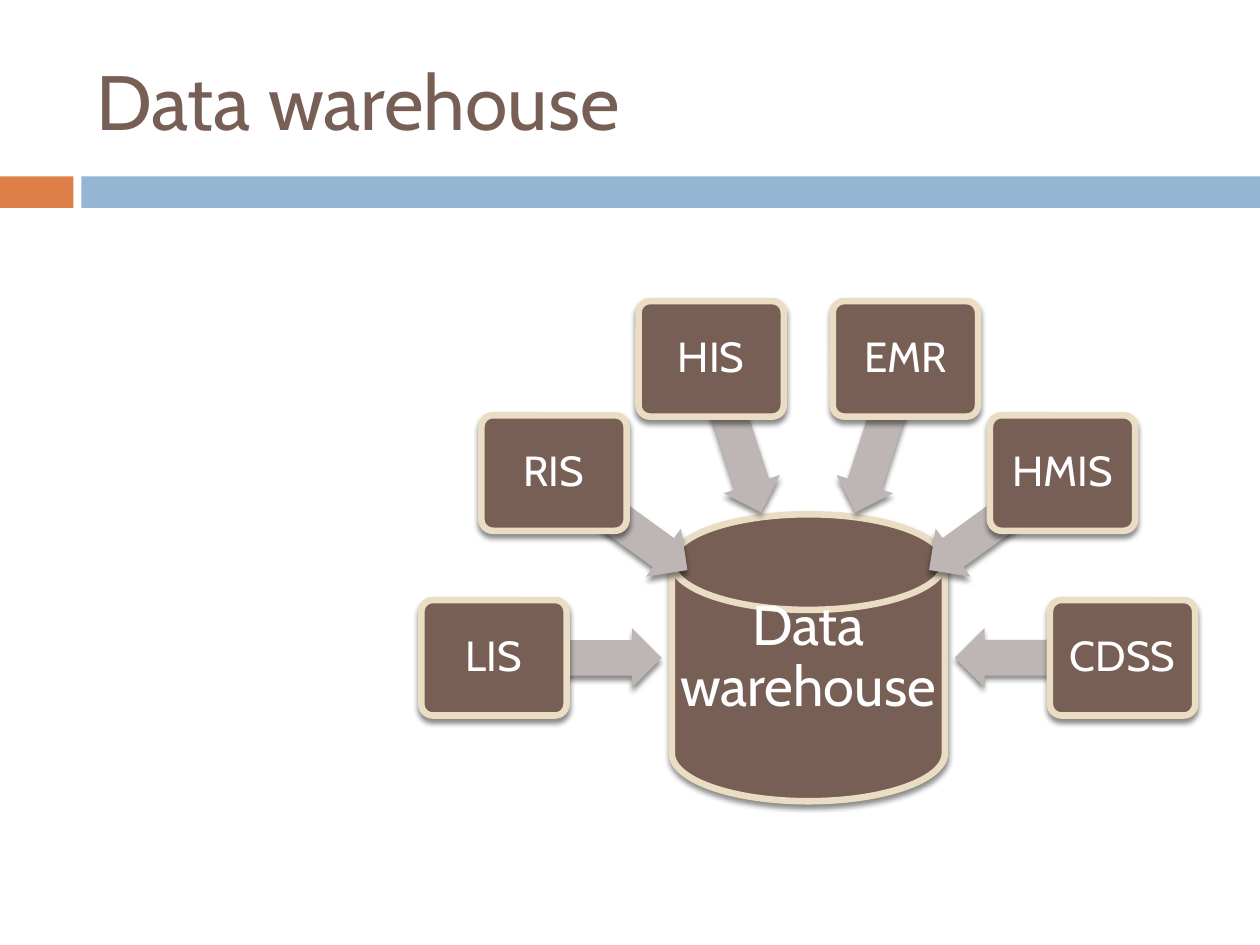
from math import cos, radians, sin

from lxml import etree
from pptx import Presentation
from pptx.dml.color import RGBColor
from pptx.enum.shapes import MSO_SHAPE
from pptx.enum.text import MSO_ANCHOR, PP_ALIGN
from pptx.oxml.ns import qn
from pptx.util import Pt

RECTANGLE = MSO_SHAPE.RECTANGLE
ROUNDED = MSO_SHAPE.ROUNDED_RECTANGLE
ARROW = MSO_SHAPE.LEFT_ARROW
DISK = MSO_SHAPE.FLOWCHART_MAGNETIC_DISK
LEFT, CENTER = PP_ALIGN.LEFT, PP_ALIGN.CENTER
MIDDLE = MSO_ANCHOR.MIDDLE

BROWN, CREAM, GREY = "775F55", "EBDDC3", "BDB6B4"
ORANGE, BLUE, WHITE = "DD8047", "94B6D2", "FFFFFF"

HUB_X, HUB_Y = 461.9, 375.9
RING_RADIUS = 179.6
BOX_WIDTH, BOX_HEIGHT = 83, 66
ARROW_HEIGHT = 34
# Name, direction from the hub in degrees, arrow length
SYSTEMS = [
    ("LIS", 180, 95.8),
    ("RIS", 216, 94.3),
    ("HIS", 252, 92.2),
    ("EMR", 288, 92.2),
    ("HMIS", 324, 94.3),
    ("CDSS", 360, 95.8),
]


def color(value):
    return RGBColor.from_string(value)


class SlideBuilder:
    font = "Cabin"

    def __init__(self, slide):
        self.slide = slide

    def shape(self, kind, left, top, width, height, fill, line=None):
        shape = self.slide.shapes.add_shape(
            kind, Pt(left), Pt(top), Pt(width), Pt(height))
        shape.shadow.inherit = False
        shape.fill.solid()
        shape.fill.fore_color.rgb = color(fill)
        if line:
            shape.line.color.rgb = color(line)
            shape.line.width = Pt(3.75)
        else:
            shape.line.fill.background()
        return shape

    def shadow(self, shape):
        """Cast a soft shadow straight down."""
        effects = shape._element.spPr.find(qn("a:effectLst"))
        shadow = etree.SubElement(
            effects, qn("a:outerShdw"), blurRad=str(Pt(3)), dist=str(Pt(2.4)),
            dir="5400000", rotWithShape="0")
        black = etree.SubElement(shadow, qn("a:srgbClr"), val="000000")
        etree.SubElement(black, qn("a:alpha"), val="45000")

    def label(self, shape, text, size, fill, align=CENTER, inset=3.6, spacing=0.9):
        frame = shape.text_frame
        frame.word_wrap = True
        frame.vertical_anchor = MIDDLE
        frame.margin_left = frame.margin_right = Pt(inset)
        frame.margin_top = frame.margin_bottom = Pt(min(inset, 3.6))
        paragraph = frame.paragraphs[0]
        paragraph.text = text
        paragraph.alignment = align
        paragraph.line_spacing = spacing
        paragraph.font.name = self.font
        paragraph.font.size = Pt(size)
        paragraph.font.color.rgb = color(fill)

    def text(self, left, top, width, height, text, size, fill, **style):
        box = self.slide.shapes.add_textbox(
            Pt(left), Pt(top), Pt(width), Pt(height))
        self.label(box, text, size, fill, **style)

    def hub(self, text, width, height):
        place = (HUB_X - width / 2, HUB_Y - height / 2, width, height)
        self.shadow(self.shape(DISK, *place, BROWN, CREAM))
        self.text(*place, text, 32, WHITE, inset=1.4)

    def arrow(self, angle, length):
        """Point at the hub, with the tail at the middle of a system box."""
        radius = RING_RADIUS - length / 2
        x = HUB_X + radius * cos(radians(angle))
        y = HUB_Y + radius * sin(radians(angle))
        arrow = self.shape(ARROW, x - length / 2, y - ARROW_HEIGHT / 2,
                           length, ARROW_HEIGHT, GREY)
        arrow.adjustments[0] = 0.6
        arrow.adjustments[1] = 0.5
        arrow.rotation = angle % 360
        self.shadow(arrow)

    def system(self, name, angle):
        x = HUB_X + RING_RADIUS * cos(radians(angle))
        y = HUB_Y + RING_RADIUS * sin(radians(angle))
        box = self.shape(ROUNDED, x - BOX_WIDTH / 2, y - BOX_HEIGHT / 2,
                         BOX_WIDTH, BOX_HEIGHT, BROWN, CREAM)
        box.adjustments[0] = 0.1
        self.shadow(box)
        self.label(box, name, 24, WHITE)


def main():
    presentation = Presentation()
    presentation.slide_width = Pt(720)
    presentation.slide_height = Pt(540)
    builder = SlideBuilder(
        presentation.slides.add_slide(presentation.slide_layouts[6]))

    builder.shape(RECTANGLE, 0, 100.8, 42, 18, ORANGE)
    builder.shape(RECTANGLE, 46.5, 100.8, 673.5, 18, BLUE)
    builder.text(48, 18, 642, 78, "Data warehouse", 44, BROWN,
                 align=LEFT, inset=7.2, spacing=1.0)

    builder.hub("Data warehouse", 156, 164)
    for name, angle, length in SYSTEMS:
        builder.arrow(angle, length)
        builder.system(name, angle)

    presentation.save("out.pptx")


if __name__ == "__main__":
    main()
